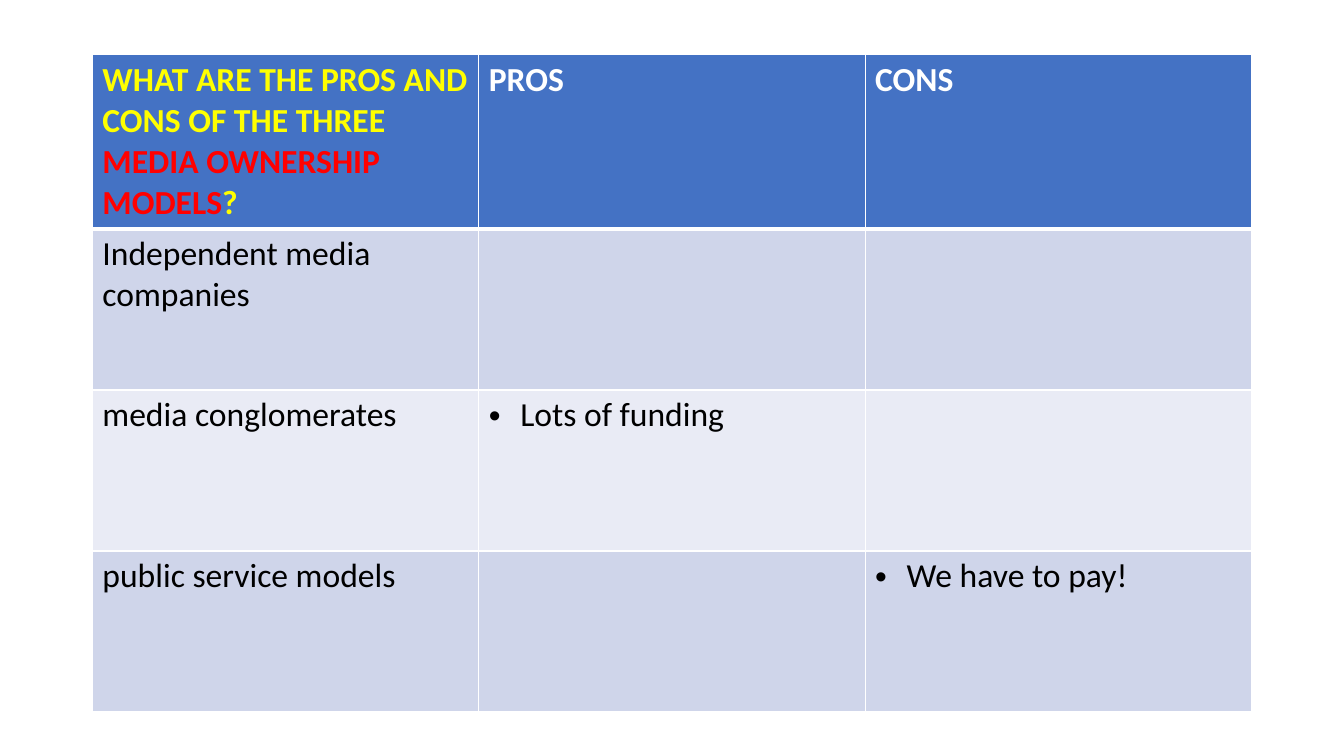
from dataclasses import dataclass

from lxml.etree import SubElement
from pptx import Presentation
from pptx.dml.color import RGBColor
from pptx.oxml.ns import qn
from pptx.table import _Cell
from pptx.util import Pt

WHITE, BLACK, YELLOW, RED = "FFFFFF", "000000", "FFFF00", "FF0000"
HEADER_FILL = "4472C4"
BAND_FILLS = ("E9EBF5", "CFD5EA")
LEFT, TOP = 66, 39.2
COLUMN_WIDTH, ROW_HEIGHT = 276, 115
BULLET_INDENT = 22.5


@dataclass(frozen=True)
class Span:
    text: str
    color: str = BLACK


@dataclass(frozen=True)
class Entry:
    spans: tuple[Span, ...] = ()
    bulleted: bool = False


EMPTY = Entry()
OWNERSHIP_ROWS: tuple[tuple[Entry, ...], ...] = (
    (
        Entry((
            Span("WHAT ARE THE PROS AND CONS OF THE THREE ", YELLOW),
            Span("MEDIA OWNERSHIP MODELS", RED),
            Span("?", YELLOW),
        )),
        Entry((Span("PROS", WHITE),)),
        Entry((Span("CONS", WHITE),)),
    ),
    (Entry((Span("Independent media companies"),)), EMPTY, EMPTY),
    (
        Entry((Span("media conglomerates"),)),
        Entry((Span("Lots of funding"),), bulleted=True),
        EMPTY,
    ),
    (
        Entry((Span("public service models"),)),
        EMPTY,
        Entry((Span("We have to pay!"),), bulleted=True),
    ),
)


def rgb(color: str) -> RGBColor:
    return RGBColor.from_string(color)


def add_borders(cell: _Cell, widths: dict[str, float]) -> None:
    properties = cell._tc.get_or_add_tcPr()
    for side, width in widths.items():
        border = SubElement(properties, qn(f"a:ln{side}"), w=str(Pt(width)))
        fill = SubElement(border, qn("a:solidFill"))
        SubElement(fill, qn("a:srgbClr"), val=WHITE)


def write_entry(cell: _Cell, entry: Entry, bold: bool) -> None:
    paragraph = cell.text_frame.paragraphs[0]
    paragraph.font.name = "Calibri"
    paragraph.font.size = Pt(24)
    paragraph.font.bold = bold
    if len({span.color for span in entry.spans}) == 1:
        paragraph.font.color.rgb = rgb(entry.spans[0].color)
    for span in entry.spans:
        run = paragraph.add_run()
        run.text = span.text
        if len(entry.spans) > 1:
            run.font.color.rgb = rgb(span.color)
    if entry.bulleted:
        properties = paragraph._p.get_or_add_pPr()
        properties.set("marL", str(Pt(BULLET_INDENT)))
        properties.set("indent", str(-Pt(BULLET_INDENT)))
        bullet_font = properties.makeelement(qn("a:buFont"), {"typeface": "Arial"})
        bullet = properties.makeelement(qn("a:buChar"), {"char": "•"})
        properties.insert(0, bullet_font)
        properties.insert(1, bullet)


def draw_cell(cell: _Cell, entry: Entry, row: int) -> None:
    is_header = row == 0
    top = 3 if row == 1 else 1
    bottom = 3 if is_header else 1
    add_borders(cell, {"L": 1, "R": 1, "T": top, "B": bottom})
    cell.fill.solid()
    cell.fill.fore_color.rgb = rgb(HEADER_FILL if is_header else BAND_FILLS[row % 2])
    write_entry(cell, entry, is_header)


def main() -> None:
    presentation = Presentation()
    presentation.slide_width, presentation.slide_height = Pt(960), Pt(540)
    slide = presentation.slides.add_slide(presentation.slide_layouts[6])
    row_count, column_count = len(OWNERSHIP_ROWS), len(OWNERSHIP_ROWS[0])
    ownership = slide.shapes.add_table(
        row_count, column_count, Pt(LEFT), Pt(TOP),
        Pt(column_count * COLUMN_WIDTH), Pt(row_count * ROW_HEIGHT),
    ).table
    for row, entries in enumerate(OWNERSHIP_ROWS):
        for column, entry in enumerate(entries):
            draw_cell(ownership.cell(row, column), entry, row)
    presentation.save("out.pptx")


if __name__ == "__main__":
    main()
